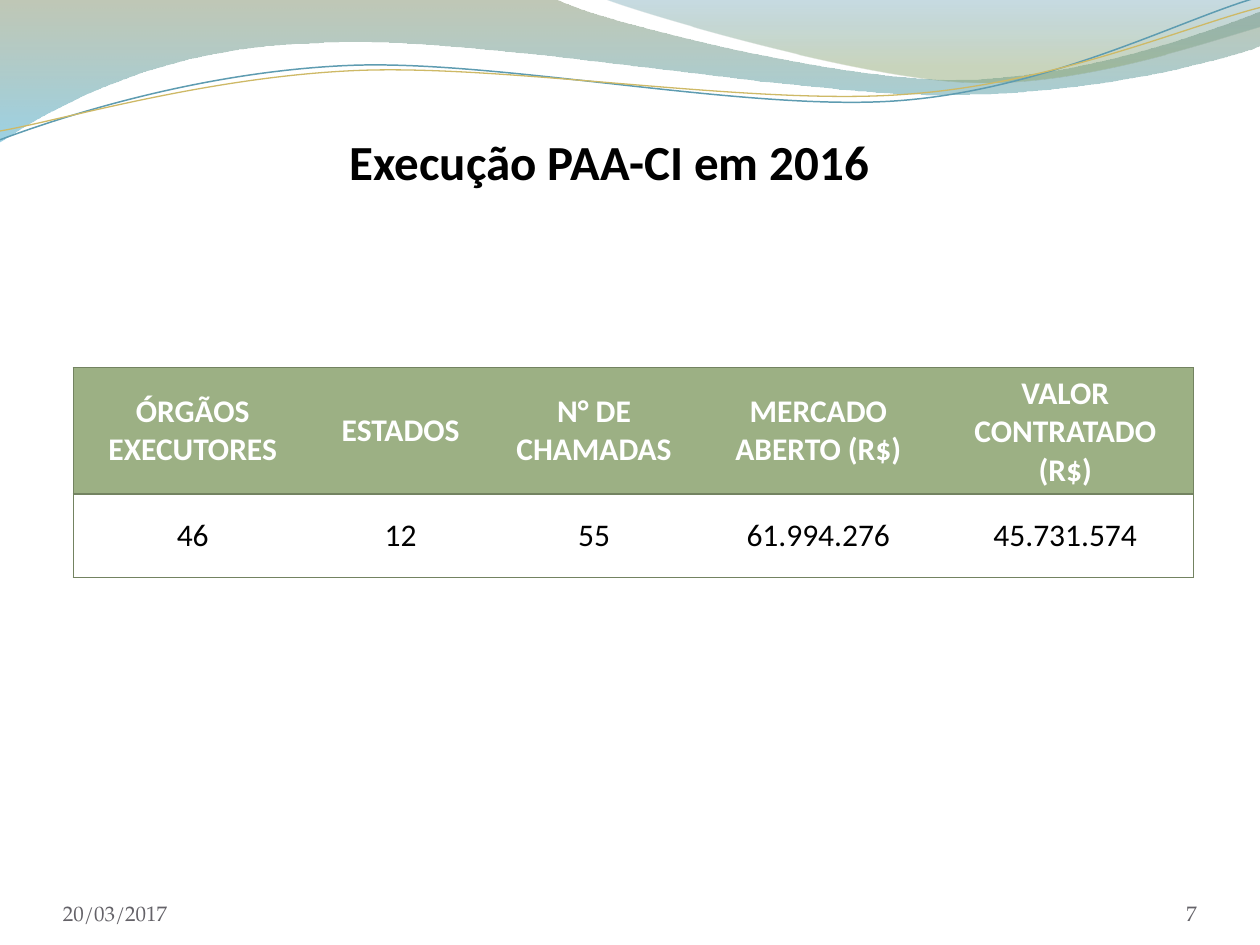
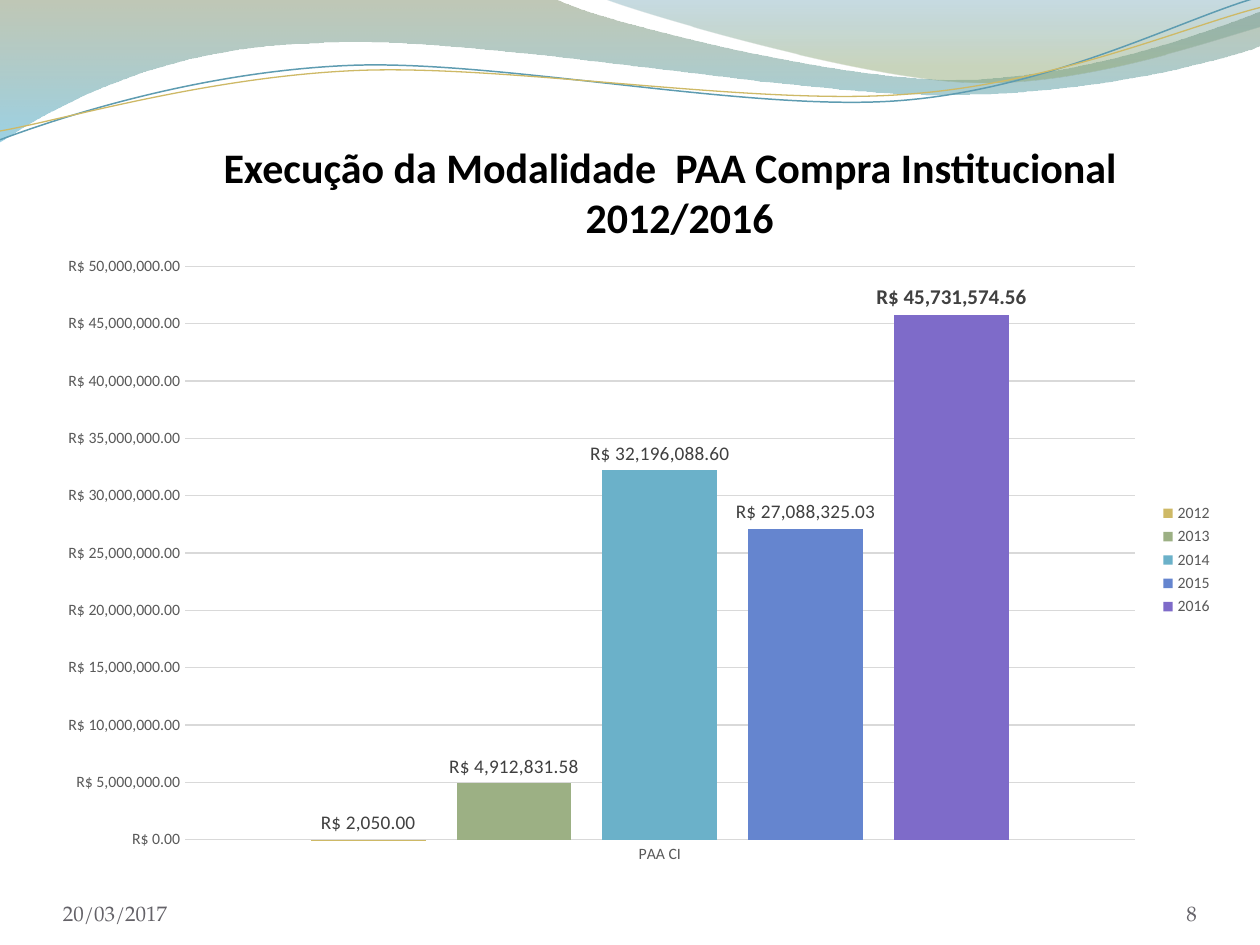
import dataclasses

import pptx
import pptx.chart.data
import pptx.dml.color
import pptx.enum.chart
import pptx.enum.text
import pptx.oxml.ns
import pptx.util
from lxml import etree

ALIGN = pptx.enum.text.PP_ALIGN
ANCHOR = pptx.enum.text.MSO_ANCHOR
COLUMNS, ROWS = 40, 30
CELL = pptx.util.Inches(0.25)
HEADING_FONT = "Calibri"
FOOTER_FONT = "TeX Gyre Pagella"
MONEY_FORMAT = '"R$"\\ #,##0.00'
FIRST_WAVE_ID = 100
COLORS = {
    "black": "000000", "white": "FFFFFF", "footer": "646268",
    "axis": "595959", "label": "404040", "grid": "D9D9D9",
    "border": "738361", "moss": "74855E", "sky": "4AACCE",
    "teal": "45889F", "leaf": "8AA36D", "line blue": "5E9CB1",
    "gold": "CEB966", "green": "9CB084", "blue": "6BB1C9",
    "indigo": "6585CF", "purple": "7E6BC9",
}

BANDS = [
    ([(0, 0), (4.4, -0.01), (4.76, 0.17, 6.64, 0.63, 7.58, 0.63),
      (8.53, 0.63, 9.58, 0.26, 10, 0.09), (10.01, 0.36),
      (9.83, 0.44, 8.7, 0.76, 7.46, 0.75), (6.22, 0.75, 3.82, 0.28, 2.57, 0.34),
      (1.29, 0.36, 0.46, 0.83, -0.01, 1.13), (0, 0)],
     [(0, "moss", 45), (1, "sky", 55)]),
    ([(4.79, -0.01), (5.09, 0.11, 6.82, 0.62, 7.69, 0.65),
      (8.56, 0.69, 9.61, 0.32, 10, 0.21), (10, 0), (4.79, -0.01)],
     [(0, "teal", 30), (0.8, "leaf", 45)]),
]
STRANDS = [
    ([(0, 1.11), (0.48, 0.93, 1.58, 0.57, 2.77, 0.52),
      (3.95, 0.47, 5.93, 0.89, 7.13, 0.8), (8.33, 0.71, 9.38, 0.15, 9.98, -0.02)],
     "line blue", 0.85),
    ([(0, 1.04), (0.47, 0.96, 1.64, 0.61, 2.83, 0.56),
      (4.03, 0.51, 5.97, 0.84, 7.17, 0.75), (8.36, 0.67, 9.41, 0.21, 10, 0.06)],
     "gold", 0.75),
]

TABLE_COLUMNS = [
    ("ÓRGÃOS EXECUTORES", "46", 7.6),
    ("ESTADOS", "12", 5.6),
    ("N° DE CHAMADAS", "55", 6.68),
    ("MERCADO ABERTO (R$)", "61.994.276", 7.56),
    ("VALOR CONTRATADO (R$)", "45.731.574", 8.12),
]
TABLE_ROWS = [4, 2.64]
YEARS = [
    ("2012", 2050, "gold"),
    ("2013", 4912831.58, "green"),
    ("2014", 32196088.6, "blue"),
    ("2015", 27088325.03, "indigo"),
    ("2016", 45731574.56, "purple"),
]


@dataclasses.dataclass
class Box:
    """Region measured in grid columns and rows."""
    left: float
    top: float
    width: float
    height: float

    def emu(self):
        """Return left, top, width and height in EMU."""
        return [cells(value) for value in dataclasses.astuple(self)]


def cells(count):
    """Convert a number of grid cells to a length."""
    return pptx.util.Emu(round(count * CELL))


def rgb(name):
    """Look up a colour by name."""
    return pptx.dml.color.RGBColor.from_string(COLORS[name])


def add_element(parent, tag, **attributes):
    """Append a child element with a prefixed tag."""
    return etree.SubElement(parent, pptx.oxml.ns.qn(tag), **attributes)


def style_font(font, size, color, bold=False, name=HEADING_FONT):
    """Format a font."""
    font.size, font.bold, font.name = pptx.util.Pt(size), bold, name
    font.color.rgb = rgb(color)


def write(frame, text, align=ALIGN.CENTER, spacing=0, **font_format):
    """Put one formatted paragraph in a text frame."""
    frame.word_wrap = True
    paragraph = frame.paragraphs[0]
    paragraph.alignment = align
    paragraph.space_before = paragraph.space_after = pptx.util.Pt(spacing)
    run = paragraph.add_run()
    run.text = text
    style_font(run.font, **font_format)


def add_outline(slide, box, segments, close):
    """Draw corners and cubic curves given in tenths of the box width."""
    left, top, width, _ = box.emu()
    unit = width / 10
    corners = [(left + segment[-2] * unit, top + segment[-1] * unit) for segment in segments]
    builder = slide.shapes.build_freeform(*corners[0])
    builder.add_line_segments(corners[1:], close=close)
    shape = builder.convert_to_shape()
    shape.shadow.inherit = False
    for line, segment in zip(shape.element.xpath(".//a:lnTo"), segments[1:]):
        if len(segment) == 2:
            continue
        curve = etree.Element(pptx.oxml.ns.qn("a:cubicBezTo"))
        for x, y in zip(segment[::2], segment[1::2]):
            add_element(curve, "a:pt", x=str(round(left + x * unit - shape.left)),
                        y=str(round(top + y * unit - shape.top)))
        line.getparent().replace(line, curve)
    return shape


def add_waves(slide, box):
    """Draw the gradient bands and thin strands, and return them."""
    waves = []
    for segments, stops in BANDS:
        band = add_outline(slide, box, segments, True)
        band.line.fill.background()
        band.fill.gradient()
        band.fill.gradient_angle = 270
        for gradient_stop, (position, color, _) in zip(band.fill.gradient_stops, stops):
            gradient_stop.position = position
            gradient_stop.color.rgb = rgb(color)
        for element, (_, _, opacity) in zip(band.element.xpath(".//a:gs/a:srgbClr"), stops):
            add_element(element, "a:alpha", val=str(opacity * 1000))
        waves.append(band)
    for segments, color, width in STRANDS:
        strand = add_outline(slide, box, segments, False)
        strand.fill.background()
        strand.line.color.rgb = rgb(color)
        strand.line.width = pptx.util.Pt(width)
        waves.append(strand)
    return waves


def share_on_layout(shapes, layout):
    """Move shapes from a slide to its layout."""
    tree = layout.placeholders[0].element.getparent()
    for number, shape in enumerate(shapes, FIRST_WAVE_ID):
        shape.element.xpath(".//p:cNvPr")[0].set("id", str(number))
        tree.append(shape.element)


def add_footer(slide, box, number):
    """Place the date at the left and the slide number at the right."""
    number_width = 3.32
    parts = [
        ("20/03/2017", box.left, 9.32, ALIGN.LEFT),
        (str(number), box.left + box.width - number_width, number_width, ALIGN.RIGHT),
    ]
    for text, left, width, align in parts:
        region = Box(left, box.top, width, box.height)
        frame = slide.shapes.add_textbox(*region.emu()).text_frame
        frame.margin_left = frame.margin_right = frame.margin_top = frame.margin_bottom = 0
        frame.vertical_anchor = ANCHOR.BOTTOM
        write(frame, text, align, size=12, color="footer", name=FOOTER_FONT)


def add_title(slide, box, text, size, spacing=0):
    """Fill and place the title placeholder."""
    title = slide.shapes.title
    title.left, title.top, title.width, title.height = box.emu()
    title.text_frame.vertical_anchor = ANCHOR.TOP
    title.text_frame.auto_size = pptx.enum.text.MSO_AUTO_SIZE.SHAPE_TO_FIT_TEXT
    write(title.text_frame, text, spacing=spacing, size=size, color="black", bold=True)


def set_borders(cell, visible):
    """Draw the visible sides of a cell and hide the others."""
    properties = cell._tc.get_or_add_tcPr()
    for side in "LRTB":
        line = add_element(properties, "a:ln" + side, w=str(pptx.util.Pt(0.75)))
        if side in visible:
            fill = add_element(line, "a:solidFill")
            add_element(fill, "a:srgbClr", val=COLORS["border"])
        else:
            add_element(line, "a:noFill")


def add_execution_table(slide, box):
    """Build the table of results for 2016."""
    table = slide.shapes.add_table(len(TABLE_ROWS), len(TABLE_COLUMNS), *box.emu()).table
    table.horz_banding = False
    for row, height in zip(table.rows, TABLE_ROWS):
        row.height = cells(height)
    last = len(TABLE_COLUMNS) - 1
    for index, (heading, value, width) in enumerate(TABLE_COLUMNS):
        table.columns[index].width = cells(width)
        sides = ("L" if index == 0 else "") + ("R" if index == last else "")
        for row_index, text in enumerate((heading, value)):
            is_heading = row_index == 0
            cell = table.cell(row_index, index)
            cell.vertical_anchor = ANCHOR.MIDDLE
            set_borders(cell, sides + ("T" if is_heading else "TB"))
            if is_heading:
                cell.fill.solid()
                cell.fill.fore_color.rgb = rgb("green")
            else:
                cell.fill.background()
            write(cell.text_frame, text, size=18, bold=is_heading,
                  color="white" if is_heading else "black")


def style_axis(axis):
    """Apply the common look of both chart axes."""
    axis.major_tick_mark = axis.minor_tick_mark = pptx.enum.chart.XL_TICK_MARK.NONE
    style_font(axis.tick_labels.font, 9, "axis")


def add_year_chart(slide, box):
    """Build the column chart of contracted values by year."""
    data = pptx.chart.data.CategoryChartData(number_format=MONEY_FORMAT)
    data.categories = ["PAA CI"]
    for year, value, _ in YEARS:
        data.add_series(year, [value])
    chart = slide.shapes.add_chart(
        pptx.enum.chart.XL_CHART_TYPE.COLUMN_CLUSTERED, *box.emu(), data).chart
    chart.has_title = False
    style_font(chart.font, 10, "black")
    chart.has_legend = True
    chart.legend.position = pptx.enum.chart.XL_LEGEND_POSITION.RIGHT
    chart.legend.include_in_layout = False
    style_font(chart.legend.font, 9, "axis")

    style_axis(chart.category_axis)
    style_axis(chart.value_axis)
    chart.value_axis.format.line.fill.background()
    chart.value_axis.tick_labels.number_format = MONEY_FORMAT
    chart.value_axis.tick_labels.number_format_is_linked = False
    for line in (chart.category_axis.format.line, chart.value_axis.major_gridlines.format.line):
        line.color.rgb = rgb("grid")
        line.width = pptx.util.Pt(0.75)

    plot = chart.plots[0]
    plot.gap_width, plot.overlap, plot.vary_by_categories = 219, -27, False
    for series, (year, _, color) in zip(plot.series, YEARS):
        series.format.fill.solid()
        series.format.fill.fore_color.rgb = rgb(color)
        labels = series.data_labels
        labels.show_value = True
        labels.number_format = MONEY_FORMAT
        labels.number_format_is_linked = False
        labels.position = pptx.enum.chart.XL_LABEL_POSITION.OUTSIDE_END
        is_latest = year == YEARS[-1][0]
        style_font(labels.font, 12 if is_latest else 11, "label", is_latest)


def add_base_slide(presentation, number):
    """Add a slide with the shared footer."""
    slide = presentation.slides.add_slide(presentation.slide_layouts[5])
    add_footer(slide, Box(2, 27.8, 36, 1.6), number)
    return slide


def main():
    """Build and save the presentation."""
    presentation = pptx.Presentation()
    presentation.slide_width, presentation.slide_height = cells(COLUMNS), cells(ROWS)

    table_slide = add_base_slide(presentation, 7)
    waves = add_waves(table_slide, Box(0, 0, COLUMNS, ROWS))
    share_on_layout(waves, table_slide.slide_layout)
    add_title(table_slide, Box(2, 3.96, 34.68, 2.28), "Execução PAA-CI em 2016", 28, 6)
    add_execution_table(table_slide, Box(2.32, 11.68, 35.56, sum(TABLE_ROWS)))

    chart_slide = add_base_slide(presentation, 8)
    add_title(chart_slide, Box(5.84, 4.28, 31.48, 3.64),
              "Execução da Modalidade  PAA Compra Institucional   2012/2016", 24)
    add_year_chart(chart_slide, Box(1.42, 7.76, 37.48, 20.04))

    presentation.save("out.pptx")


if __name__ == "__main__":
    main()
